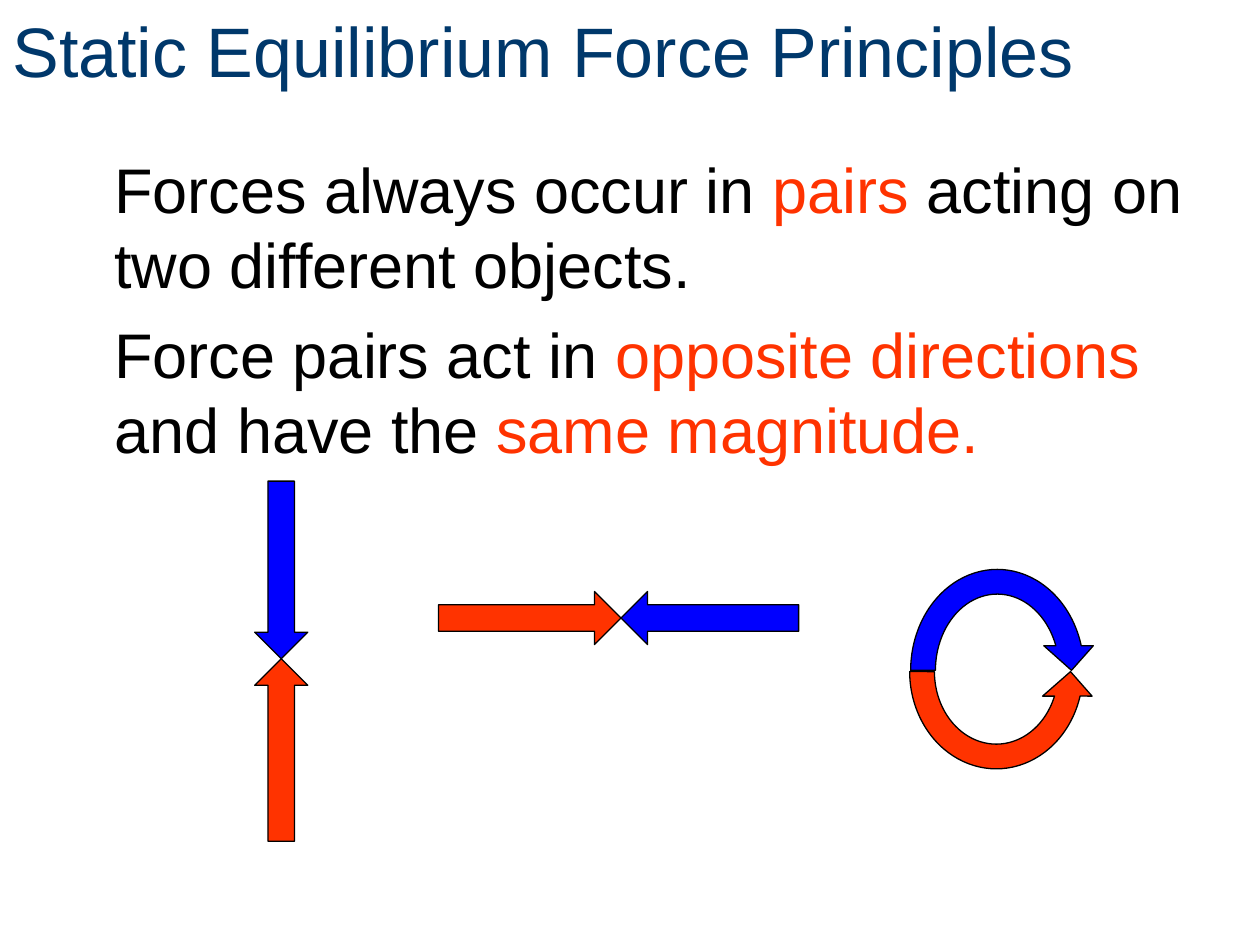
import pptx
import pptx.util
import pptx.dml.color
import pptx.enum.shapes
import pptx.enum.text

Cm = pptx.util.Cm
Pt = pptx.util.Pt
SHAPE = pptx.enum.shapes.MSO_SHAPE
ANCHOR = pptx.enum.text.MSO_ANCHOR
ALIGN = pptx.enum.text.PP_ALIGN

COLORS = {
    "title": "00386B",
    "text": "000000",
    "action": "0000FF",
    "reaction": "FF3300",
    "line": "000000",
}


class SlideBuilder:
    font = "Arial"

    def __init__(self, slide):
        self.slide = slide

    def rgb(self, name):
        return pptx.dml.color.RGBColor.from_string(COLORS[name])

    def style_run(self, r, size, color):
        r.font.name = self.font
        r.font.size = Pt(size)
        r.font.color.rgb = self.rgb(color)

    def title(self, text, left, top, width, height):
        sp = self.slide.shapes.title
        sp.left, sp.top, sp.width, sp.height = map(Cm, (left, top, width, height))
        tf = sp.text_frame
        tf.text = text
        tf.vertical_anchor = ANCHOR.MIDDLE
        p = tf.paragraphs[0]
        p.alignment = ALIGN.LEFT
        self.style_run(p.runs[0], 40, "title")

    def body(self, paragraphs, left, top, width, height, indent):
        sp = self.slide.shapes.add_textbox(*map(Cm, (left, top, width, height)))
        tf = sp.text_frame
        tf.word_wrap = True
        tf.margin_left = Cm(0.25 + indent)
        for i, parts in enumerate(paragraphs):
            p = tf.paragraphs[0] if i == 0 else tf.add_paragraph()
            if i:
                p.space_before = Pt(8)
            for text, color in parts:
                r = p.add_run()
                r.text = text
                self.style_run(r, 36, color)

    def arrow(self, kind, left, top, width, height, color, flip=False):
        sp = self.slide.shapes.add_shape(kind, *map(Cm, (left, top, width, height)))
        sp.shadow.inherit = False
        sp.fill.solid()
        sp.fill.fore_color.rgb = self.rgb(color)
        sp.line.color.rgb = self.rgb("line")
        sp.line.width = Pt(0.75)
        if flip:
            sp._element.spPr.xfrm.set("flipV", "1")


def main():
    prs = pptx.Presentation()
    prs.slide_width = Cm(25.4)
    prs.slide_height = Cm(19.05)
    s = SlideBuilder(prs.slides.add_slide(prs.slide_layouts[5]))

    s.title("Static Equilibrium Force Principles", 0, 0, 22.86, 1.98)
    s.body(
        [
            [
                ("Forces always occur in ", "text"),
                ("pairs ", "reaction"),
                ("acting on two different objects.", "text"),
            ],
            [
                ("Force pairs act in ", "text"),
                ("opposite directions", "reaction"),
                (" and have the ", "text"),
                ("same magnitude.", "reaction"),
            ],
        ],
        0, 2.9, 24.82, 5.33, indent=2.06,
    )

    thick, action, reaction = 1.07, 3.58, 3.68
    x, y = 5.67, 13.28
    s.arrow(SHAPE.DOWN_ARROW, x - thick / 2, y - action, thick, action, "action")
    s.arrow(SHAPE.UP_ARROW, x - thick / 2, y, thick, reaction, "reaction")

    x, y = 12.52, 12.46
    s.arrow(SHAPE.LEFT_ARROW, x, y - thick / 2, action, thick, "action")
    s.arrow(SHAPE.RIGHT_ARROW, x - reaction, y - thick / 2, reaction, thick, "reaction")

    s.arrow(SHAPE.CIRCULAR_ARROW, 18.11, 11.23, 3.99, 4.57, "action")
    s.arrow(SHAPE.CIRCULAR_ARROW, 18.09, 11.33, 3.99, 4.42, "reaction", flip=True)

    prs.save("out.pptx")


if __name__ == "__main__":
    main()
